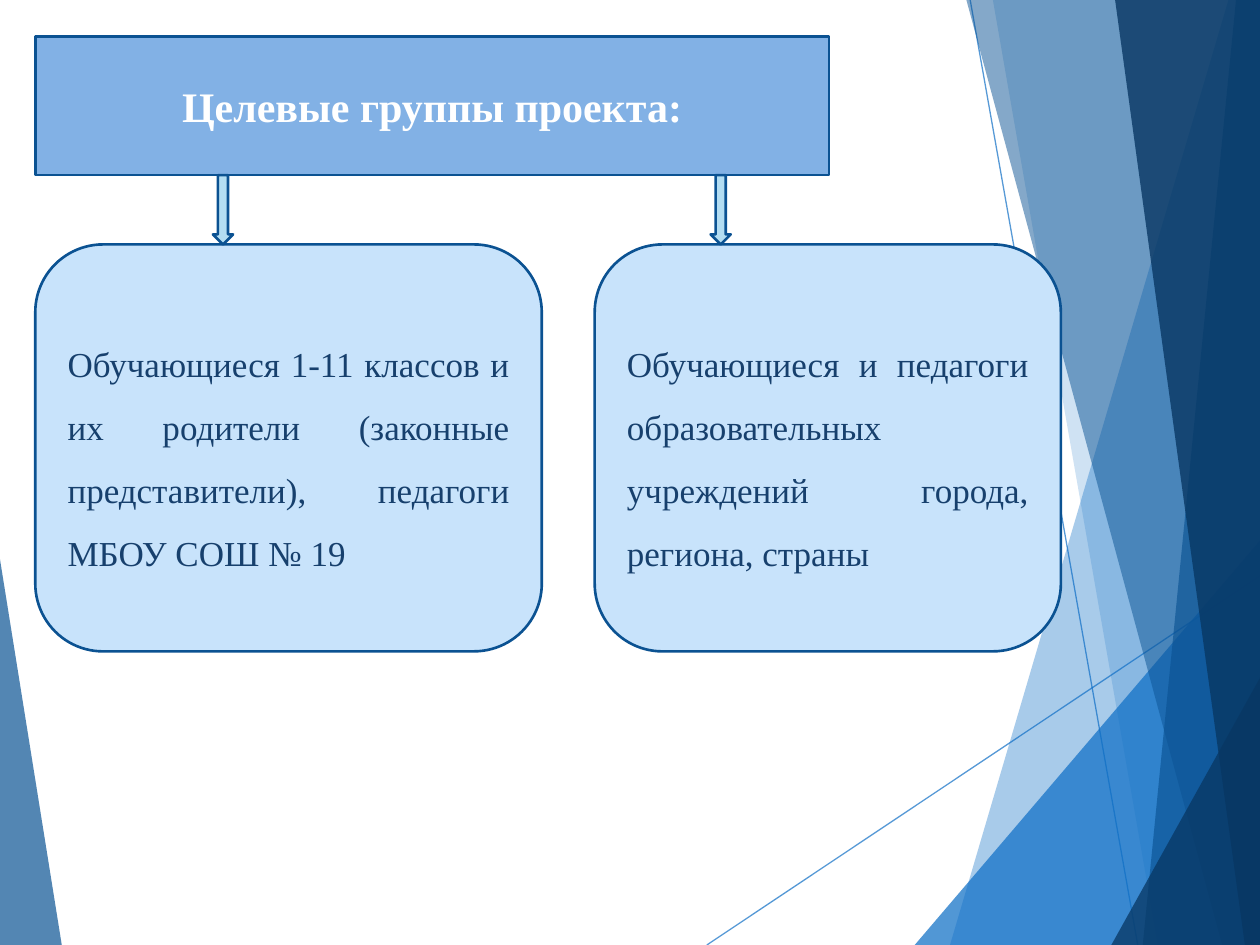
from dataclasses import dataclass
from lxml.etree import SubElement
from pptx import Presentation
from pptx.dml.color import RGBColor
from pptx.enum.shapes import MSO_CONNECTOR, MSO_SHAPE
from pptx.enum.text import MSO_ANCHOR, PP_ALIGN
from pptx.oxml import parse_xml
from pptx.oxml.ns import nsdecls, qn
from pptx.util import Inches, Pt

COLUMNS, ROWS = 100, 75
BRIGHT, MEDIUM, DARK = "0F6FC6", "0B5394", "083763"


def color(value):
    return RGBColor.from_string(value)


@dataclass
class Canvas:
    deck: object
    page: object
    font: str = "Times New Roman"
    border: str = "0B5292"
    border_width: float = 1.5

    def x(self, columns):
        return round(self.deck.slide_width * columns / COLUMNS)

    def y(self, rows):
        return round(self.deck.slide_height * rows / ROWS)

    def frame(self, left, top, width, height):
        return self.x(left), self.y(top), self.x(width), self.y(height)

    def fade(self, shape, percent):
        for node in shape.element.spPr.iter(qn("a:srgbClr")):
            SubElement(node, qn("a:alpha"), val=str(percent * 1000))

    def ray(self, start, end):
        line = self.page.shapes.add_connector(
            MSO_CONNECTOR.STRAIGHT,
            self.x(start[0]), self.y(start[1]), self.x(end[0]), self.y(end[1]))
        line.line.color.rgb = color(BRIGHT)
        line.line.width = Pt(0.75)
        self.fade(line, 70)
        SubElement(line.element.spPr, qn("a:effectLst"))

    def facet(self, points, fill, opacity):
        corners = [(self.x(column), self.y(row)) for column, row in points]
        builder = self.page.shapes.build_freeform(*corners[0])
        builder.add_line_segments(corners[1:], close=True)
        shape = builder.convert_to_shape()
        self.paint(shape, fill)
        shape.line.fill.background()
        self.fade(shape, opacity)

    def paint(self, shape, fill):
        shape.shadow.inherit = False
        shape.fill.solid()
        shape.fill.fore_color.rgb = color(fill)
        shape.line.color.rgb = color(self.border)
        shape.line.width = Pt(self.border_width)

    def label(self, shape, text, size, ink, align, spacing=1.0, bold=False):
        box = shape.text_frame
        box.word_wrap = True
        box.vertical_anchor = MSO_ANCHOR.MIDDLE
        para = box.paragraphs[0]
        para.text = text
        para.alignment = align
        para.line_spacing = spacing
        para.font.name = self.font
        para.font.size = Pt(size)
        para.font.bold = bold
        para.font.color.rgb = color(ink)

    def title(self, frame, text):
        title = self.page.shapes.title
        title.left, title.top, title.width, title.height = self.frame(*frame)
        title.element.spPr.insert(1, parse_xml(
            f'<a:prstGeom {nsdecls("a")} prst="roundRect"><a:avLst/></a:prstGeom>'))
        self.paint(title, "82B1E5")
        self.label(title, text, 24, "FFFFFF", PP_ALIGN.CENTER, bold=True)

    def card(self, frame, text):
        card = self.page.shapes.add_shape(
            MSO_SHAPE.ROUNDED_RECTANGLE, *self.frame(*frame))
        self.paint(card, "C8E3FB")
        self.label(card, text, 20, "17406D", PP_ALIGN.JUSTIFY, spacing=1.5)

    def arrow(self, frame):
        arrow = self.page.shapes.add_shape(MSO_SHAPE.DOWN_ARROW, *self.frame(*frame))
        self.paint(arrow, "B3DDF2")


def main():
    deck = Presentation()
    deck.slide_width, deck.slide_height = Inches(10), Inches(7.5)
    page = deck.slides.add_slide(deck.slide_layouts[5])
    canvas = Canvas(deck, page)

    canvas.ray((56.1, ROWS), (COLUMNS, 45.7))
    canvas.ray((77, 0), (90.3, ROWS))

    top_right, bottom_right = (COLUMNS, 0), (COLUMNS, ROWS)
    facets = [
        ([(97.5, 0), (75.4, ROWS), bottom_right, top_right], BRIGHT, 36),
        ([(78.8, 0), (91.9, ROWS), bottom_right, top_right], BRIGHT, 20),
        ([(72.6, ROWS), (COLUMNS, 42.9), bottom_right], BRIGHT, 72),
        ([(76.7, 0), (97, ROWS), bottom_right, top_right], MEDIUM, 50),
        ([(98.1, 0), (90.7, ROWS), bottom_right, top_right], MEDIUM, 66),
        ([(88.5, 0), (98.8, ROWS), bottom_right, top_right], DARK, 80),
        ([(88.2, ROWS), (COLUMNS, 53.8), bottom_right], DARK, 76),
        ([(0, 44.4), (4.9, ROWS), (0, ROWS)], MEDIUM, 70),
    ]
    for points, fill, opacity in facets:
        canvas.facet(points, fill, opacity)

    margin, title_top, title_height = 2.8, 2.9, 11
    title_bottom = title_top + title_height
    arrow_width, arrow_height = 1.6, 5.5
    card_top, card_height = title_bottom + arrow_height, 32.3
    canvas.title((margin, title_top, 63, title_height), "Целевые группы проекта:")

    groups = [
        (margin, 40.2, 16.9, "Обучающиеся 1-11 классов и их родители "
         "(законные представители), педагоги МБОУ СОШ № 19"),
        (47.2, 37, 56.4, "Обучающиеся и педагоги образовательных учреждений "
         "города, региона, страны"),
    ]
    for left, width, arrow_left, text in groups:
        canvas.card((left, card_top, width, card_height), text)
        canvas.arrow((arrow_left, title_bottom, arrow_width, arrow_height))

    deck.save("out.pptx")


if __name__ == "__main__":
    main()
